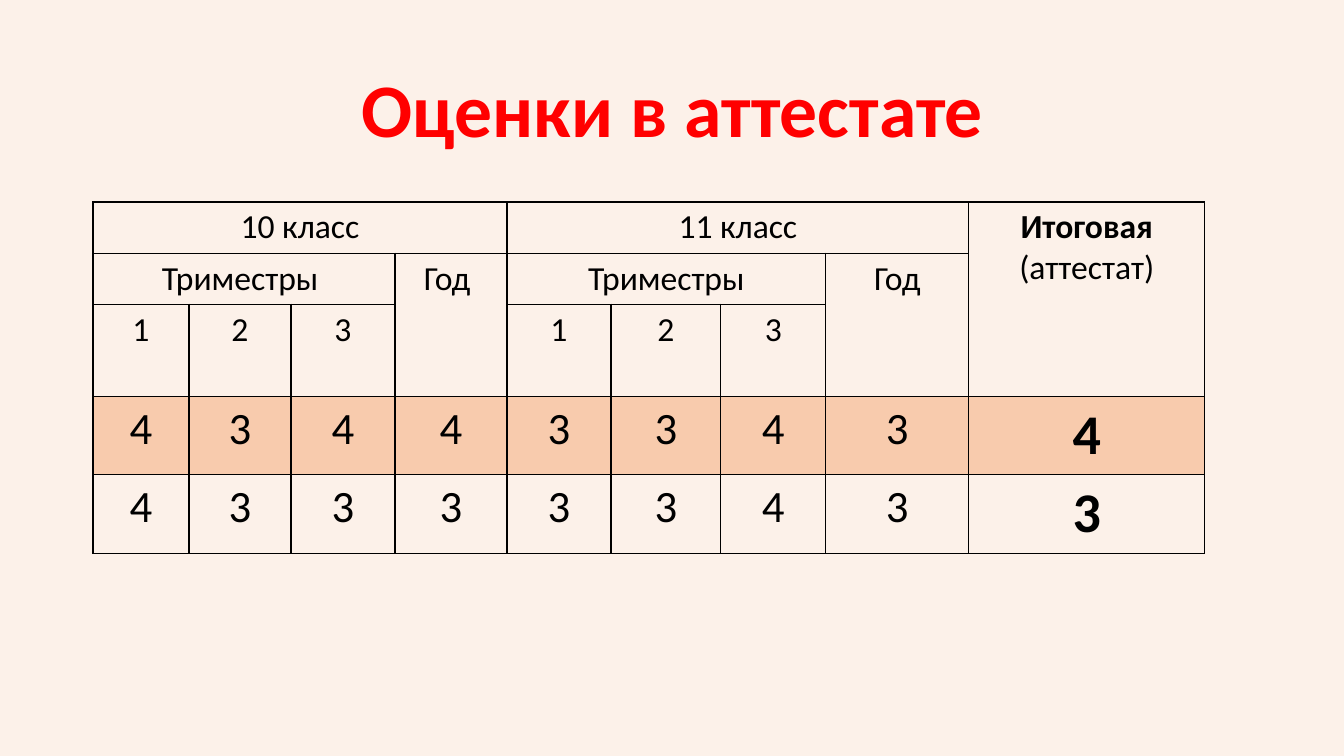
from dataclasses import dataclass

from lxml.etree import SubElement as Sub
from pptx import Presentation
from pptx.dml.color import RGBColor as RGB
from pptx.enum.text import MSO_ANCHOR as Anchor, PP_ALIGN as Align
from pptx.oxml.ns import qn
from pptx.util import Pt

SCALE = 914400 / 100.8


@dataclass(frozen=True)
class Theme:
    font: str = "Calibri"
    back: str = "FCF1E9"
    title: str = "FF0000"
    ink: str = "000000"
    band: str = "F8CBAD"
    head: int = 24
    mark: int = 32
    final: int = 40
    large: int = 54


THEME = Theme()

COLS = [96, 102, 104, 112, 104, 110, 105, 143, 236]
ROWS = [51, 51, 92, 78, 79]

# Header cells: row, column, rows spanned, columns spanned, lines
HEADS = [
    (0, 0, 1, 4, ["10 класс"]),
    (0, 4, 1, 4, ["11 класс"]),
    (0, 8, 3, 1, ["Итоговая", "(аттестат)"]),
    (1, 0, 1, 3, ["Триместры "]),
    (1, 3, 2, 1, ["Год "]),
    (1, 4, 1, 3, ["Триместры"]),
    (1, 7, 2, 1, ["Год"]),
]
TERMS = {0: "1", 1: "2", 2: "3", 4: "1", 5: "2", 6: "3"}
MARKS = ["434433434", "433333433"]


def px(num):
    return round(num * SCALE)


def add_run(para, text, size, color=THEME.ink, bold=False):
    para.alignment = Align.CENTER
    run = para.add_run()
    run.text = text
    font = run.font
    font.name, font.size, font.bold = THEME.font, Pt(size), bold
    font.color.rgb = RGB.from_string(color)


def add_title(slide, left, top, width, height):
    shape = slide.shapes.title
    shape.left, shape.top = px(left), px(top)
    shape.width, shape.height = px(width), px(height)
    frame = shape.text_frame
    frame.word_wrap = True
    frame.vertical_anchor = Anchor.MIDDLE
    para = frame.paragraphs[0]
    para.line_spacing = 0.9
    add_run(para, "Оценки в аттестате", THEME.large, THEME.title, True)


def style_cell(cell, row):
    # Borders come before the fill in the cell properties
    props = cell._tc.get_or_add_tcPr()
    for side in ("lnL", "lnR", "lnT", "lnB"):
        line = Sub(props, qn(f"a:{side}"), w=str(Pt(1)))
        fill = Sub(line, qn("a:solidFill"))
        Sub(fill, qn("a:srgbClr"), val=THEME.ink)
    if row == 3:
        cell.fill.solid()
        cell.fill.fore_color.rgb = RGB.from_string(THEME.band)
    else:
        cell.fill.background()


def add_grades(slide, left, top):
    frame = slide.shapes.add_table(len(ROWS), len(COLS), px(left), px(top),
                                   px(sum(COLS)), px(sum(ROWS)))
    table = frame.table
    table.first_row = table.horz_banding = False
    for col, width in zip(table.columns, COLS):
        col.width = px(width)
    for row, height in zip(table.rows, ROWS):
        row.height = px(height)
    for row in range(len(ROWS)):
        for col in range(len(COLS)):
            style_cell(table.cell(row, col), row)

    # Header
    for row, col, high, wide, lines in HEADS:
        cell = table.cell(row, col)
        cell.merge(table.cell(row + high - 1, col + wide - 1))
        body = cell.text_frame
        for num, text in enumerate(lines):
            para = body.add_paragraph() if num else body.paragraphs[0]
            add_run(para, text, THEME.head, bold=text == "Итоговая")
    for col, text in TERMS.items():
        para = table.cell(2, col).text_frame.paragraphs[0]
        add_run(para, text, THEME.head)

    # Marks, the last one being the final grade
    for row, marks in enumerate(MARKS, 3):
        for col, mark in enumerate(marks):
            last = col == len(COLS) - 1
            para = table.cell(row, col).text_frame.paragraphs[0]
            add_run(para, mark, THEME.final if last else THEME.mark, bold=last)


def main():
    deck = Presentation()
    deck.slide_width, deck.slide_height = px(1344), px(756)
    slide = deck.slides.add_slide(deck.slide_layouts[5])
    fill = slide.background.fill
    fill.solid()
    fill.fore_color.rgb = RGB.from_string(THEME.back)
    add_title(slide, 93, 40, 1159, 146)
    add_grades(slide, 93, 202)
    deck.save("out.pptx")


if __name__ == "__main__":
    main()
